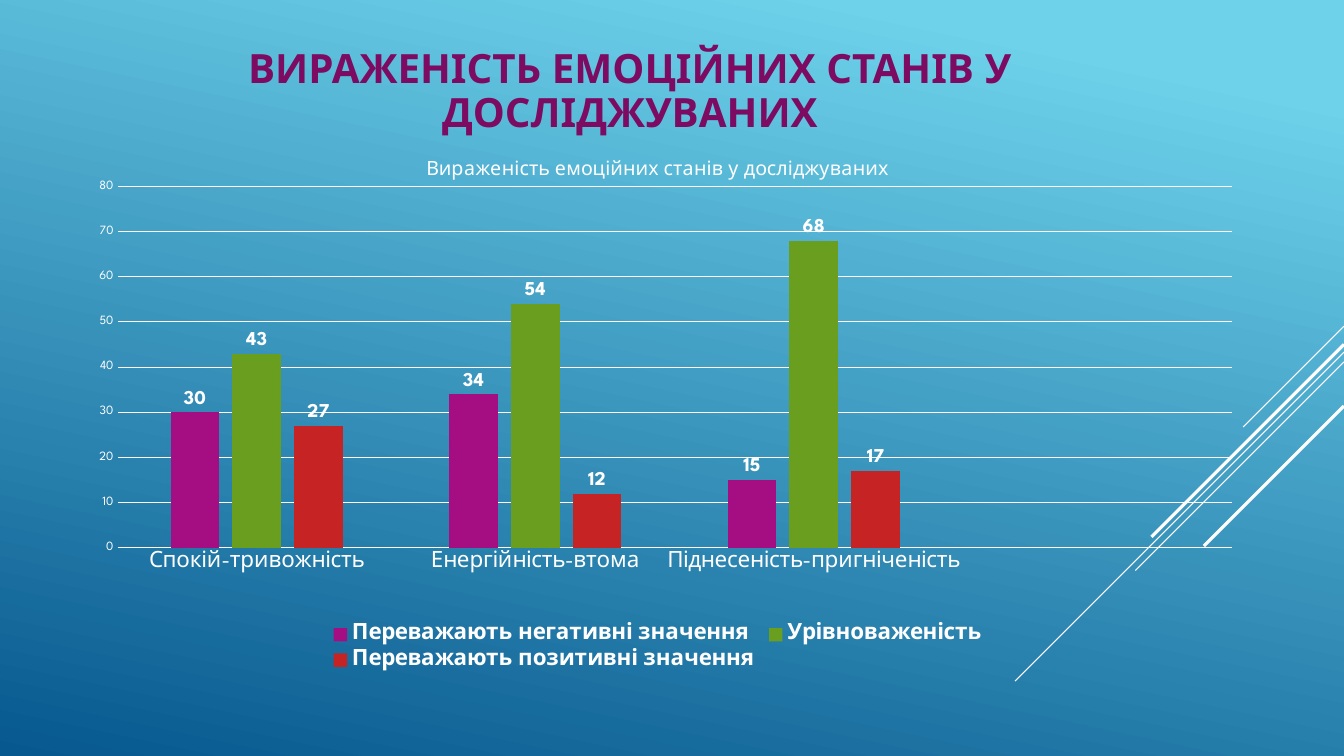
from lxml import etree
from pptx import Presentation
from pptx.chart.data import CategoryChartData
from pptx.dml.color import RGBColor
from pptx.enum.chart import XL_CHART_TYPE, XL_LABEL_POSITION, XL_LEGEND_POSITION, XL_TICK_MARK
from pptx.enum.shapes import MSO_CONNECTOR
from pptx.enum.text import MSO_ANCHOR, PP_ALIGN
from pptx.oxml import parse_xml
from pptx.oxml.ns import nsdecls, qn
from pptx.util import Pt

COLUMNS = XL_CHART_TYPE.COLUMN_CLUSTERED
OUTSIDE = XL_LABEL_POSITION.OUTSIDE_END
BOTTOM = XL_LEGEND_POSITION.BOTTOM
NO_TICK = XL_TICK_MARK.NONE
STRAIGHT = MSO_CONNECTOR.STRAIGHT
MIDDLE = MSO_ANCHOR.MIDDLE
CENTER = PP_ALIGN.CENTER

PAGE_WIDTH, PAGE_HEIGHT = 960, 540
CATEGORIES = ["Спокій-тривожність", "Енергійність-втома", "Піднесеність-пригніченість", ""]
SERIES = [
    ("Переважають негативні значення", [30, 34, 15, None], "A50E82"),
    ("Урівноваженість", [43, 54, 68, None], "6A9E1F"),
    ("Переважають позитивні значення", [27, 12, 17, None], "C62324"),
]
DIAGONALS = [
    (233, 72, 0.75),
    (251.5, 235, 0.75),
    (258.5, 149, 0.75),
    (246, 137.5, 2.25),
    (290, 100, 2.25),
]


def color(value):
    return RGBColor.from_string(value)


class Page:
    font_name = "League Spartan"
    white = "FFFFFF"

    def __init__(self, deck):
        self.slide = deck.slides.add_slide(deck.slide_layouts[6])

    def style(self, font, size, bold=False, tint=white):
        font.name = self.font_name
        font.size = Pt(size)
        font.bold = bold
        font.color.rgb = color(tint)

    def background(self, stops, clockwise):
        fill = self.slide.background.fill
        fill.gradient()
        fill.gradient_angle = 360 - clockwise
        for stop, (position, tint) in zip(fill.gradient_stops, stops):
            stop.position = position
            stop.color.rgb = color(tint)

    def diagonal(self, top, reach, width):
        line = self.slide.shapes.add_connector(
            STRAIGHT, Pt(PAGE_WIDTH), Pt(top), Pt(PAGE_WIDTH - reach), Pt(top + reach))
        line.line.color.rgb = color(self.white)
        line.line.width = Pt(width)
        etree.SubElement(line._element.spPr, qn("a:effectLst"))

    def heading(self, text, left, top, width, height, size, tint):
        box = self.slide.shapes.add_textbox(Pt(left), Pt(top), Pt(width), Pt(height))
        frame = box.text_frame
        frame.word_wrap = True
        frame.vertical_anchor = MIDDLE
        frame.text = text
        para = frame.paragraphs[0]
        para.alignment = CENTER
        para.line_spacing = 0.9
        self.style(para.runs[0].font, size, True, tint)

    def column_chart(self, title, left, top, width, height, plot_area):
        data = CategoryChartData()
        data.categories = CATEGORIES
        for name, values, tint in SERIES:
            data.add_series(name, values)
        chart = self.slide.shapes.add_chart(
            COLUMNS, Pt(left), Pt(top), Pt(width), Pt(height), data).chart
        self.style(chart.font, 10)
        chart.has_title = True
        chart.chart_title.text_frame.text = title
        self.style(chart.chart_title.text_frame.paragraphs[0].runs[0].font, 14)
        chart.has_legend = True
        chart.legend.position = BOTTOM
        chart.legend.include_in_layout = False
        self.style(chart.legend.font, 16, True)
        self.axes(chart)
        plot = chart.plots[0]
        plot.gap_width = 219
        plot.overlap = -27
        plot.vary_by_categories = False
        for series, (name, values, tint) in zip(plot.series, SERIES):
            series.format.fill.solid()
            series.format.fill.fore_color.rgb = color(tint)
            labels = series.data_labels
            labels.show_value = True
            labels.position = OUTSIDE
            self.style(labels.font, 14, True)
        self.place_plot(chart, plot_area)

    def axes(self, chart):
        categories, values = chart.category_axis, chart.value_axis
        for axis, size in ((categories, 16), (values, 9)):
            axis.major_tick_mark = NO_TICK
            axis.minor_tick_mark = NO_TICK
            self.style(axis.tick_labels.font, size)
        values.minimum_scale = 0
        values.maximum_scale = 80
        values.major_unit = 10
        values.has_major_gridlines = True
        values.format.line.fill.background()
        for line in (categories.format.line, values.major_gridlines.format.line):
            line.color.rgb = color(self.white)
            line.width = Pt(0.75)

    def place_plot(self, chart, plot_area):
        settings = [("layoutTarget", "inner"), ("xMode", "edge"), ("yMode", "edge")]
        settings += zip("xywh", plot_area)
        inner = "".join(f'<c:{tag} val="{value}"/>' for tag, value in settings)
        layout = parse_xml(
            f'<c:layout {nsdecls("c")}><c:manualLayout>{inner}</c:manualLayout></c:layout>')
        area = chart._chartSpace.chart.plotArea
        for old in area.findall(qn("c:layout")):
            area.remove(old)
        area.insert(0, layout)


def main():
    deck = Presentation()
    deck.slide_width = Pt(PAGE_WIDTH)
    deck.slide_height = Pt(PAGE_HEIGHT)
    page = Page(deck)
    page.background([(0.1, "6ED2EB"), (1, "06588E")], 102)
    for top, reach, width in DIAGONALS:
        page.diagonal(top, reach, width)
    page.heading("ВИРАЖЕНІСТЬ ЕМОЦІЙНИХ СТАНІВ У ДОСЛІДЖУВАНИХ",
                 54, 39.6, 792, 52.6, 28.8, "7C0B61")
    page.column_chart("Вираженість емоційних станів у досліджуваних",
                      54, 100, 831.6, 382.3, (0.036, 0.087, 0.957, 0.675))
    deck.save("out.pptx")


if __name__ == "__main__":
    main()
